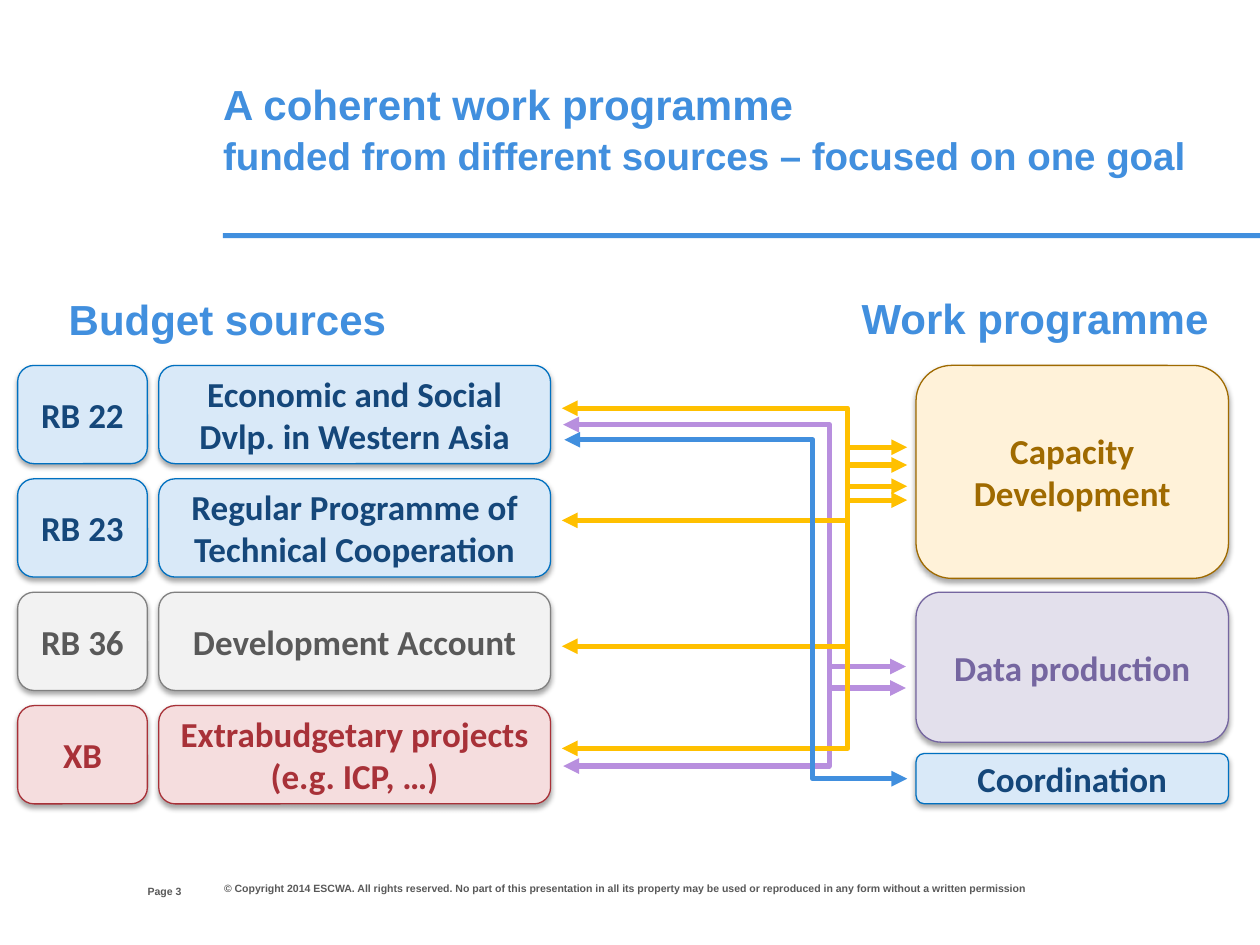
"""Build the slide on funding sources and the work programme."""
import pptx
import pptx.dml.color
import pptx.enum.shapes
import pptx.enum.text
import pptx.oxml
import pptx.util
from pptx.util import Inches

COLORS = {
    "blue": "418FDE", "gold": "FFC000", "lilac": "B88FDE", "text": "595959",
}
# fill, line, text
THEMES = {
    "blue": ("D9E9F8", "0070C0", "15477A"),
    "gray": ("F2F2F2", "808080", "595959"),
    "red": ("F5DDDE", "A83138", "A83138"),
    "gold": ("FFF2D9", "9F6A00", "9F6A00"),
    "lilac": ("E3E0EC", "7566A0", "7566A0"),
}
TITLE = [
    ("A coherent work programme", 24),
    ("funded from different sources – focused on one goal", 22),
]
HEADS = [
    ("Budget sources", (0.07, 2.28, 3.47, 0.5)),
    ("Work programme", (6.44, 2.27, 3.55, 0.5)),
]
SOURCES = [
    ("RB 22", "Economic and Social Dvlp. in Western Asia", "blue"),
    ("RB 23", "Regular Programme of Technical Cooperation", "blue"),
    ("RB 36", "Development Account", "gray"),
    ("XB", "Extrabudgetary projects\n(e.g. ICP, …)", "red"),
]
GOALS = [
    ("Capacity Development", 2.9, 1.69, "gold"),
    ("Data production", 4.7, 1.19, "lilac"),
    ("Coordination", 5.98, 0.4, "blue"),
]
# color, left x, bend x, right x, pairs of source y and goal y
LINKS = [
    ("lilac", 4.47, 6.58, 7.19, [(3.37, 5.46), (6.08, 5.29)]),
    ("gold", 4.46, 6.73, 7.2,
     [(3.24, 3.69), (4.13, 3.55), (5.13, 3.97), (5.94, 3.86)]),
    ("blue", 4.48, 6.45, 7.2, [(3.49, 6.18)]),
]
PAGE = "Page 3"
RIGHTS = ("© Copyright 2014 ESCWA. All rights reserved. No part of this presentation "
          "in all its property may be used or reproduced in any form without a "
          "written permission")
TOP, STEP, HIGH = 2.9, 0.9, 0.78
NS = 'xmlns:a="http://schemas.openxmlformats.org/drawingml/2006/main"'
SHADE = (f'<a:effectLst {NS}><a:outerShdw blurRad="39370" dist="22860" dir="5400000" '
         'rotWithShape="0"><a:srgbClr val="000000"><a:alpha val="35000"/></a:srgbClr>'
         '</a:outerShdw></a:effectLst>')
ALIGN = pptx.enum.text.PP_ALIGN
ANCHOR = pptx.enum.text.MSO_ANCHOR


def rgb(code):
    return pptx.dml.color.RGBColor.from_string(code)


def write(shape, lines, color=COLORS["blue"], font="Arial", align=ALIGN.LEFT,
          anchor=ANCHOR.TOP, inset=None):
    frame = shape.text_frame
    frame.word_wrap = True
    frame.auto_size = pptx.enum.text.MSO_AUTO_SIZE.NONE
    frame.vertical_anchor = anchor
    if inset is not None:
        frame.margin_left = frame.margin_right = Inches(inset)
        frame.margin_top = frame.margin_bottom = Inches(inset)
    for i, (text, size) in enumerate(lines):
        para = frame.add_paragraph() if i else frame.paragraphs[0]
        para.text = text.replace("\n", "\v")
        para.alignment = align
        for run in para.runs:
            run.font.name = font
            run.font.size = pptx.util.Pt(size)
            run.font.bold = True
            run.font.color.rgb = rgb(color)


def label(slide, text, size, area, **style):
    box = slide.shapes.add_textbox(*map(Inches, area))
    write(box, [(text, size)], **style)


def card(slide, text, theme, *area):
    fill, edge, ink = THEMES[theme]
    kind = pptx.enum.shapes.MSO_SHAPE.ROUNDED_RECTANGLE
    shape = slide.shapes.add_shape(kind, *map(Inches, area))
    shape.fill.solid()
    shape.fill.fore_color.rgb = rgb(fill)
    shape.line.color.rgb = rgb(edge)
    shape.line.width = pptx.util.Pt(0.75)
    shape._element.spPr.append(pptx.oxml.parse_xml(SHADE))
    write(shape, [(text, 20)], color=ink, font="Calibri",
          align=ALIGN.CENTER, anchor=ANCHOR.MIDDLE)


def link(slide, color, left, bend, right, start, end):
    kind = pptx.enum.shapes.MSO_CONNECTOR.ELBOW
    line = slide.shapes.add_connector(kind, *map(Inches, (left, start, right, end)))
    line.line.color.rgb = rgb(COLORS[color])
    line.line.width = pptx.util.Pt(3)
    props = line._element.spPr
    ratio = round((bend - left) / (right - left) * 100000)
    geom = props.prstGeom
    for old in list(geom):
        geom.remove(old)
    geom.append(pptx.oxml.parse_xml(
        f'<a:avLst {NS}><a:gd name="adj1" fmla="val {ratio}"/></a:avLst>'))
    for tag in ("headEnd", "tailEnd"):
        props.ln.append(pptx.oxml.parse_xml(f'<a:{tag} {NS} type="triangle"/>'))
    props.append(pptx.oxml.parse_xml(f"<a:effectLst {NS}/>"))


def main():
    deck = pptx.Presentation()
    deck.slide_width, deck.slide_height = Inches(10), Inches(7.5)
    slide = deck.slides.add_slide(deck.slide_layouts[5])

    rule = slide.shapes.add_shape(pptx.enum.shapes.MSO_SHAPE.RECTANGLE,
                                  *map(Inches, (1.77, 1.85, 8.23, 0.04)))
    rule.shadow.inherit = False
    rule.fill.solid()
    rule.fill.fore_color.rgb = rgb(COLORS["blue"])
    rule.line.fill.background()

    title = slide.shapes.title
    title.left, title.top, title.width, title.height = map(
        Inches, (1.77, 0.62, 8.23, 0.85))
    write(title, TITLE, inset=0)
    title.text_frame.paragraphs[1].space_before = pptx.util.Pt(2)

    label(slide, PAGE, 6, (0.75, 7.02, 0.69, 0.11), color=COLORS["text"],
          align=ALIGN.RIGHT, inset=0)
    label(slide, RIGHTS, 6, (1.68, 6.95, 7.74, 0.21), color=COLORS["text"])
    for text, area in HEADS:
        label(slide, text, 24, area, align=ALIGN.CENTER)

    for i, (code, name, theme) in enumerate(SOURCES):
        top = TOP + i * STEP
        card(slide, code, theme, 0.14, top, 1.03, HIGH)
        card(slide, name, theme, 1.26, top, 3.11, HIGH)
    for name, top, high, theme in GOALS:
        card(slide, name, theme, 7.27, top, 2.48, high)
    for color, left, bend, right, pairs in LINKS:
        for start, end in pairs:
            link(slide, color, left, bend, right, start, end)

    deck.save("out.pptx")


if __name__ == "__main__":
    main()
